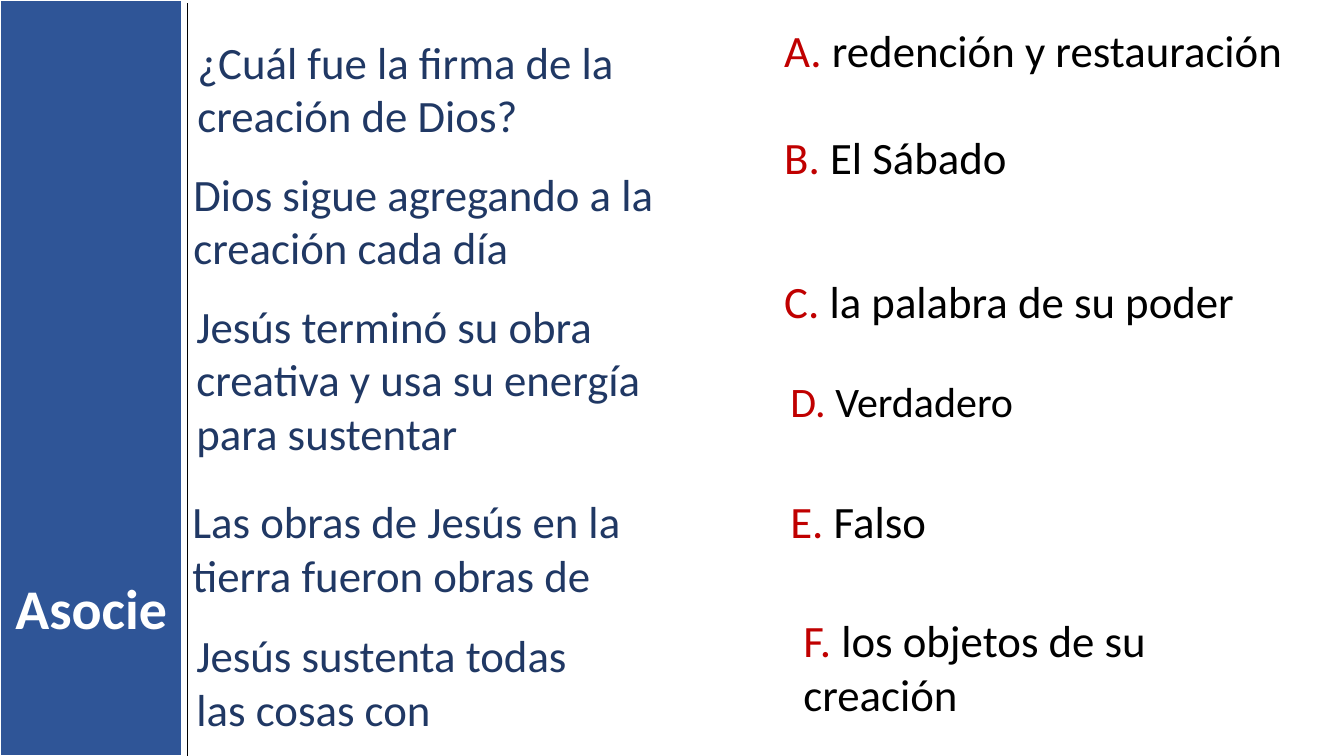
from pptx import Presentation
from pptx.dml.color import RGBColor
from pptx.enum.shapes import MSO_CONNECTOR, MSO_SHAPE
from pptx.enum.text import MSO_ANCHOR, MSO_AUTO_SIZE, PP_ALIGN
from pptx.util import Pt
from lxml import etree

PX = 9144  # 100 px to the inch
W, H = 1333, 750
BAND_W = 181
NAVY, RED, BLACK, WHITE, BLUE = "203864", "C00000", "000000", "FFFFFF", "2F5597"


def rgb(value):
    return RGBColor.from_string(value)


def write(sp, box, *runs, size=32, bold=False, align=PP_ALIGN.LEFT):
    """Place a shape and fill it with (text, colour) runs."""
    sp.left, sp.top, sp.width, sp.height = [v * PX for v in box]
    tf = sp.text_frame
    tf.word_wrap = True
    tf.auto_size = MSO_AUTO_SIZE.SHAPE_TO_FIT_TEXT
    tf.vertical_anchor = MSO_ANCHOR.TOP
    p = tf.paragraphs[0]
    p.alignment = align
    for text, color in runs:
        r = p.add_run()
        r.text = text
        r.font.name = "Calibri"
        r.font.size = Pt(size)
        r.font.bold = bold
        r.font.color.rgb = rgb(color)


prs = Presentation()
prs.slide_width, prs.slide_height = W * PX, H * PX
s = prs.slides.add_slide(prs.slide_layouts[5])

# Side band with the title on top of it
band = s.shapes.add_shape(MSO_SHAPE.RECTANGLE, 0, 0, BAND_W * PX, H * PX)
band.shadow.inherit = False
band.fill.solid()
band.fill.fore_color.rgb = rgb(BLUE)
band.line.color.rgb = rgb(WHITE)
band.line.width = Pt(1.5)

title = s.shapes.title
title.element.addprevious(band.element)
write(title, (0, 564, BAND_W, 77), ("Asocie", WHITE),
      size=40, bold=True, align=PP_ALIGN.CENTER)

# Questions to match
questions = [
    ((186, 29, 489, 118), "¿Cuál fue la firma de la creación de Dios?"),
    ((182, 160, 516, 118), "Dios sigue agregando a la creación cada día"),
    ((185, 291, 510, 172), "Jesús terminó su obra creativa y usa su energía para sustentar"),
    ((181, 485, 494, 118), "Las obras de Jesús en la tierra fueron obras de"),
    ((185, 618, 446, 118), "Jesús sustenta todas las cosas con"),
]
for box, question in questions:
    write(s.shapes.add_textbox(0, 0, 0, 0), box, (question, NAVY))

# Lettered answers
answers = [
    ("A", (768, 18, 547, 64), 32, "redención y restauración"),
    ("B", (768, 124, 547, 64), 32, "El Sábado"),
    ("C", (768, 267, 473, 64), 32, "la palabra de su poder"),
    ("D", (774, 368, 475, 61), 30, "Verdadero"),
    ("E", (774, 485, 505, 64), 32, "Falso"),
    ("F", (787, 603, 462, 118), 32, "los objetos de su creación"),
]
for letter, box, size, answer in answers:
    write(s.shapes.add_textbox(0, 0, 0, 0), box,
          (f"{letter}. ", RED), (answer, BLACK), size=size)

# Rule beside the band
rule = s.shapes.add_connector(MSO_CONNECTOR.STRAIGHT, 186 * PX, 3 * PX, 186 * PX, H * PX)
rule.line.color.rgb = rgb(BLACK)
rule.line.width = Pt(1)
etree.SubElement(rule.element.spPr,
                 "{http://schemas.openxmlformats.org/drawingml/2006/main}effectLst")

prs.save("out.pptx")
